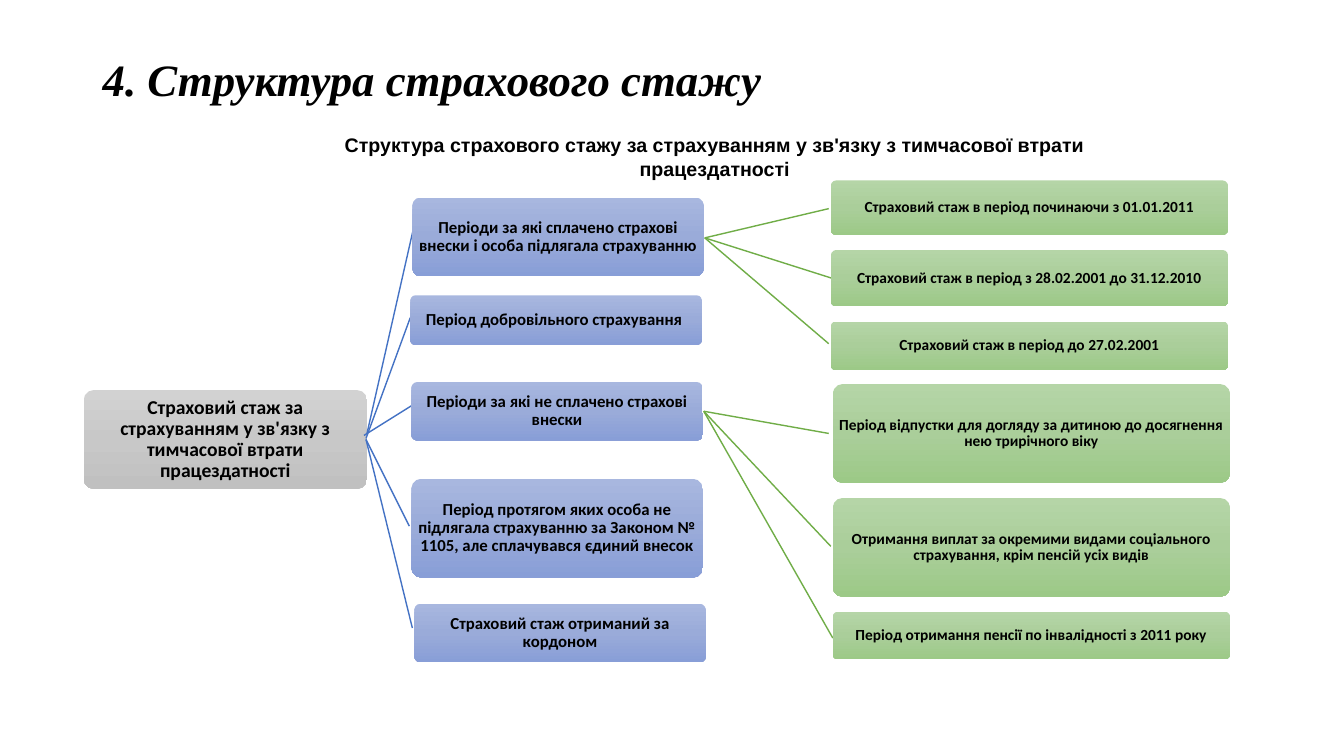
from copy import deepcopy
from dataclasses import dataclass

from lxml.etree import SubElement
from pptx import Presentation
from pptx.dml.color import RGBColor
from pptx.enum.shapes import MSO_CONNECTOR, MSO_SHAPE
from pptx.enum.text import MSO_ANCHOR, PP_ALIGN
from pptx.oxml.ns import qn
from pptx.util import Pt

PX = 9144  # 100 px to the inch


@dataclass(frozen=True)
class Theme:
    ink: str = "000000"
    paper: str = "FFFFFF"
    gray: tuple = ("D2D2D2", "C8C8C8", "C0C0C0")
    blue: tuple = ("A8B7DF", "9AABD9", "889ED7")
    green: tuple = ("B5D5A7", "AACE9A", "9CC987")
    blue_line: str = "4472C4"
    green_line: str = "70AD47"
    title_font: str = "Times New Roman"
    heading_font: str = "Arial"
    box_font: str = "Calibri"
    title_size: int = 32
    heading_size: int = 14
    root_size: int = 14
    period_size: int = 12
    detail_size: int = 11


def write_text(frame, text, *, font, size, color, italic=False,
               align=PP_ALIGN.CENTER, anchor=MSO_ANCHOR.MIDDLE, spacing=0.9, inset=None):
    frame.word_wrap = True
    frame.vertical_anchor = anchor
    if inset is not None:
        frame.margin_left = frame.margin_right = inset * PX
        frame.margin_top = frame.margin_bottom = inset * PX
    para = frame.paragraphs[0]
    para.alignment = align
    para.line_spacing = spacing
    span = para.add_run()
    span.text = text
    span.font.name, span.font.size = font, Pt(size)
    span.font.bold, span.font.italic = True, italic
    span.font.color.rgb = RGBColor.from_string(color)


class Diagram:
    def __init__(self, page, theme):
        self.page = page
        self.theme = theme

    def title(self, text, area):
        box = self.page.shapes.add_textbox(*(n * PX for n in area))
        write_text(box.text_frame, text, font=self.theme.title_font, size=self.theme.title_size,
                   color=self.theme.ink, italic=True, align=PP_ALIGN.LEFT)

    def heading(self, text, area):
        box = self.page.shapes.add_shape(MSO_SHAPE.RECTANGLE, *(n * PX for n in area))
        box.shadow.inherit = False
        box.fill.solid()
        box.fill.fore_color.rgb = RGBColor.from_string(self.theme.paper)
        box.line.fill.background()
        write_text(box.text_frame, text, font=self.theme.heading_font,
                   size=self.theme.heading_size, color=self.theme.ink,
                   anchor=MSO_ANCHOR.TOP, spacing=1.0)

    def box(self, text, area, colors, size):
        box = self.page.shapes.add_shape(MSO_SHAPE.ROUNDED_RECTANGLE, *(n * PX for n in area))
        box.adjustments[0] = 0.1
        box.shadow.inherit = False
        box.line.fill.background()
        self.gradient(box, colors)
        write_text(box.text_frame, text, font=self.theme.box_font, size=size,
                   color=self.theme.ink, inset=1)

    def gradient(self, box, colors):
        box.fill.gradient()
        box.fill.gradient_angle = 270
        stops = box._element.spPr.find(".//" + qn("a:gsLst"))
        stops.insert(1, deepcopy(stops[0]))
        for index, (stop, color) in enumerate(zip(box.fill.gradient_stops, colors)):
            stop.position = index / 2
            stop.color.rgb = RGBColor.from_string(color)

    def line(self, start, end, color):
        line = self.page.shapes.add_connector(
            MSO_CONNECTOR.STRAIGHT, *(n * PX for n in (*start, *end)))
        line.line.color.rgb = RGBColor.from_string(color)
        line.line.width = Pt(1)
        SubElement(line._element.spPr, qn("a:effectLst"))


# Periods: text, (left, top, height), line start, line end
PERIOD_WIDTH = 289
PERIODS = [
    ("Періоди за які сплачено страхові внески і особа підлягала страхуванню",
     (409, 196, 78), (364, 430), (410, 227)),
    ("Період добровільного страхування ", (407, 293, 49), (363, 435), (407, 315)),
    ("Періоди за які не сплачено страхові внески", (408, 379, 58), (361, 432), (409, 402)),
    ("Період протягом яких особа не підлягала страхуванню за Законом № 1105, "
     "але сплачувався єдиний внесок", (408, 475, 98), (363, 436), (406, 522)),
    ("Страховий стаж отриманий за кордоном", (411, 599, 58), (363, 436), (409, 623)),
]

# Details: left edge and line start of a group, then text, top, height, line end
DETAIL_WIDTH = 394
DETAIL_GROUPS = [
    (824, (699, 236), [
        ("Страховий стаж в період починаючи з 01.01.2011", 179, 54, (822, 207)),
        ("Страховий стаж в період з 28.02.2001 до 31.12.2010", 248, 56, (825, 276)),
        ("Страховий стаж в період до 27.02.2001", 319, 48, (822, 341)),
    ]),
    (826, (698, 408), [
        ("Період відпустки для догляду за дитиною до досягнення нею трирічного віку",
         381, 98, (822, 430)),
        ("Отримання виплат за окремими видами соціального страхування, "
         "крім пенсій усіх видів", 494, 98, (824, 542)),
        ("Період отримання пенсії по інвалідності з 2011 року", 607, 47, (826, 633)),
    ]),
]


def main():
    deck = Presentation()
    deck.slide_width, deck.slide_height = 1333 * PX, 750 * PX
    theme = Theme()
    diagram = Diagram(deck.slides.add_slide(deck.slide_layouts[6]), theme)

    # Title and root
    diagram.title("4. Структура страхового стажу", (92, 40, 1150, 83))
    diagram.box("Страховий стаж за страхуванням у зв'язку з тимчасової втрати працездатності",
                (83, 387, 281, 98), theme.gray, theme.root_size)

    # Middle column
    for text, (left, top, height), start, end in PERIODS:
        diagram.line(start, end, theme.blue_line)
        diagram.box(text, (left, top, PERIOD_WIDTH, height), theme.blue, theme.period_size)

    # Right column
    for left, start, details in DETAIL_GROUPS:
        for text, top, height, end in details:
            diagram.line(start, end, theme.green_line)
            diagram.box(text, (left, top, DETAIL_WIDTH, height), theme.green, theme.detail_size)

    # Diagram heading
    diagram.heading("Структура страхового стажу за страхуванням у зв'язку з тимчасової "
                    "втрати працездатності", (286, 127, 846, 46))
    deck.save("out.pptx")


if __name__ == "__main__":
    main()
